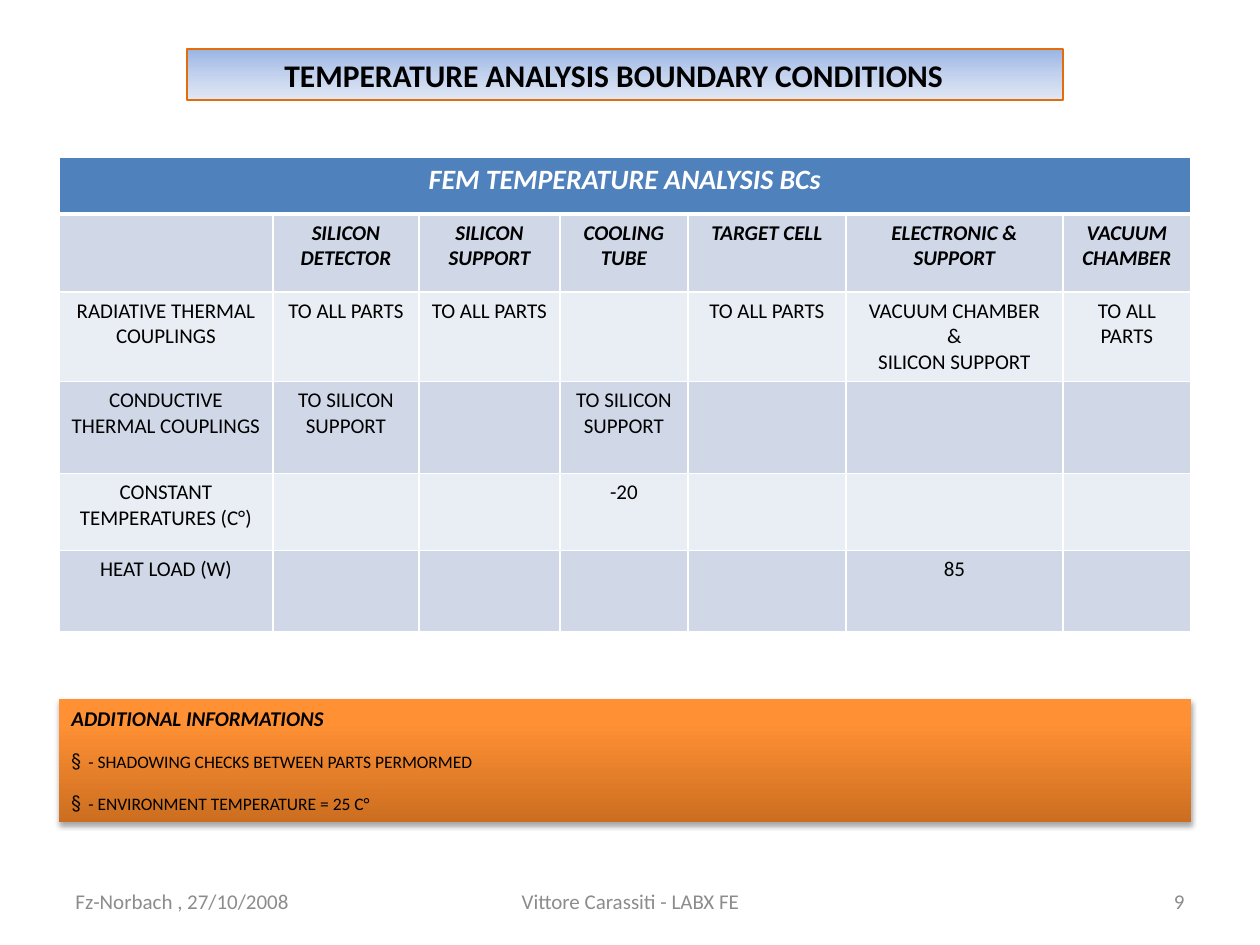
from pptx import Presentation
from pptx import util as u
from pptx.dml.color import RGBColor
from pptx.enum import shapes, text
from pptx.oxml import parse_xml
from pptx.oxml.ns import nsdecls, qn

SCALE = 914400 / 126
ALIGN = text.PP_ALIGN
COLS = [214, 146, 141, 128, 158, 217, 128]
ROWS = [57, 78, 89, 92, 77, 81]
CELLS = [
    ["FEM TEMPERATURE ANALYSIS BCs", "", "", "", "", "", ""],
    ["", "SILICON DETECTOR", "SILICON SUPPORT", "COOLING TUBE",
     "TARGET CELL", "ELECTRONIC & SUPPORT", "VACUUM CHAMBER"],
    ["RADIATIVE THERMAL COUPLINGS", "TO ALL PARTS", "TO ALL PARTS", "",
     "TO ALL PARTS", "VACUUM CHAMBER\n&\nSILICON SUPPORT", "TO ALL PARTS"],
    ["CONDUCTIVE THERMAL COUPLINGS", "TO SILICON SUPPORT", "",
     "TO SILICON SUPPORT", "", "", ""],
    ["CONSTANT TEMPERATURES (C°)", "", "", "-20", "", "", ""],
    ["HEAT LOAD (W)", "", "", "", "", "85", ""],
]
NOTES = ["ADDITIONAL INFORMATIONS", "- SHADOWING CHECKS BETWEEN PARTS PERMORMED",
         "- ENVIRONMENT TEMPERATURE = 25 C°"]
FOOTS = [
    (63, 294, "Fz-Norbach , 27/10/2008", ALIGN.LEFT),
    (431, 399, "Vittore Carassiti - LABX FE", ALIGN.CENTER),
    (903, 294, "9", ALIGN.RIGHT),
]


def px(n):
    """Turn px into EMU."""
    return u.Emu(round(n * SCALE))


def color(code):
    """Turn a hex string into a colour."""
    return RGBColor.from_string(code)


def style(par, size, code="000000", align=ALIGN.LEFT, bold=False, slant=False):
    """Set the font and alignment of a paragraph."""
    par.alignment = align
    font = par.font
    font.name, font.size = "Calibri", u.Pt(size)
    font.bold, font.italic = bold, slant
    font.color.rgb = color(code)


def shade(shape, stops, angle):
    """Fill a shape with a gradient of (percent, colour) stops."""
    shape.fill.gradient()
    shape.fill.gradient_angle = angle
    group = shape._element.spPr.find(".//" + qn("a:gsLst"))
    for old in list(group):
        group.remove(old)
    for place, code in stops:
        group.append(parse_xml(
            f'<a:gs {nsdecls("a")} pos="{place * 1000}"><a:srgbClr val="{code}"/></a:gs>'))


def add_title(slide):
    """Place and format the title banner."""
    title = slide.shapes.title
    title.left, title.top, title.width, title.height = map(px, (187, 49, 876, 51))
    shade(title, [(0, "9AB5E4"), (50, "C2D1ED"), (100, "E1E8F5")], 270)
    title.line.color.rgb = color("E46C0A")
    title.line.width = u.Pt(0.75)
    frame = title.text_frame
    frame.text = "TEMPERATURE ANALYSIS BOUNDARY CONDITIONS"
    frame.auto_size = text.MSO_AUTO_SIZE.NONE
    frame.vertical_anchor = text.MSO_ANCHOR.MIDDLE
    frame.margin_right = px(35)
    style(frame.paragraphs[0], 18, align=ALIGN.CENTER, bold=True)


def edge(cell, top, base):
    """Draw white cell borders with the given top and bottom widths."""
    props = cell._tc.get_or_add_tcPr()
    for spot, (side, width) in enumerate(zip("LRTB", (1, 1, top, base))):
        props.insert(spot, parse_xml(
            f'<a:ln{side} {nsdecls("a")} w="{u.Pt(width)}"><a:solidFill>'
            f'<a:srgbClr val="FFFFFF"/></a:solidFill></a:ln{side}>'))


def add_grid(slide):
    """Add the table of boundary conditions."""
    grid = slide.shapes.add_table(
        len(ROWS), len(COLS), px(59), px(157), px(sum(COLS)), px(sum(ROWS))).table
    for col, width in zip(grid.columns, COLS):
        col.width = px(width)
    for r, (row, height) in enumerate(zip(grid.rows, ROWS)):
        row.height = px(height)
        head = r == 0
        for cell, words in zip(row.cells, CELLS[r]):
            cell.text = words
            cell.fill.solid()
            cell.fill.fore_color.rgb = color(
                "4F81BD" if head else "D0D8E8" if r % 2 else "E9EDF4")
            edge(cell, 3 if r == 1 else 1, 3 if head else 1)
            for par in cell.text_frame.paragraphs:
                style(par, 16 if head else 12, "FFFFFF" if head else "000000",
                      ALIGN.CENTER, r < 2, r < 2)
    grid.cell(0, 0).merge(grid.cell(0, len(COLS) - 1))


def bullet(par):
    """Give a paragraph a section-sign bullet and a hanging indent."""
    props = par._p.get_or_add_pPr()
    props.set("marL", str(px(17)))
    props.set("indent", str(-px(17)))
    par.space_before = u.Pt(12)
    mark = parse_xml(f'<a:buChar {nsdecls("a")} char="§"/>')
    props.find(qn("a:spcBef")).addnext(mark)


def add_notes(slide):
    """Add the shadowed box of further information."""
    box = slide.shapes.add_shape(
        shapes.MSO_SHAPE.RECTANGLE, px(59), px(699), px(1132), px(123))
    shade(box, [(0, "CC6E20"), (80, "FF9034"), (100, "FF9136")], 90)
    box.line.fill.background()
    box.shadow.inherit = False
    box._element.spPr.find(qn("a:effectLst")).append(parse_xml(
        f'<a:outerShdw {nsdecls("a")} blurRad="{u.Pt(3.1)}" dist="{u.Pt(1.8)}" '
        'dir="5400000" rotWithShape="0"><a:srgbClr val="000000">'
        '<a:alpha val="35000"/></a:srgbClr></a:outerShdw>'))
    frame = box.text_frame
    frame.text = "\n".join(NOTES)
    frame.word_wrap = True
    frame.vertical_anchor = text.MSO_ANCHOR.TOP
    lead, *items = frame.paragraphs
    style(lead, 12, bold=True, slant=True)
    for par in items:
        style(par, 10)
        bullet(par)


def add_foot(slide, left, width, words, align):
    """Add one grey footer text."""
    frame = slide.shapes.add_textbox(px(left), px(876), px(width), px(50)).text_frame
    frame.text = words
    frame.word_wrap = True
    frame.vertical_anchor = text.MSO_ANCHOR.MIDDLE
    style(frame.paragraphs[0], 12, "8C8C8C", align)


def main():
    """Build and save the slide."""
    deck = Presentation()
    deck.slide_width, deck.slide_height = px(1260), px(945)
    slide = deck.slides.add_slide(deck.slide_layouts[5])
    add_title(slide)
    add_grid(slide)
    add_notes(slide)
    for foot in FOOTS:
        add_foot(slide, *foot)
    deck.save("out.pptx")


if __name__ == "__main__":
    main()
